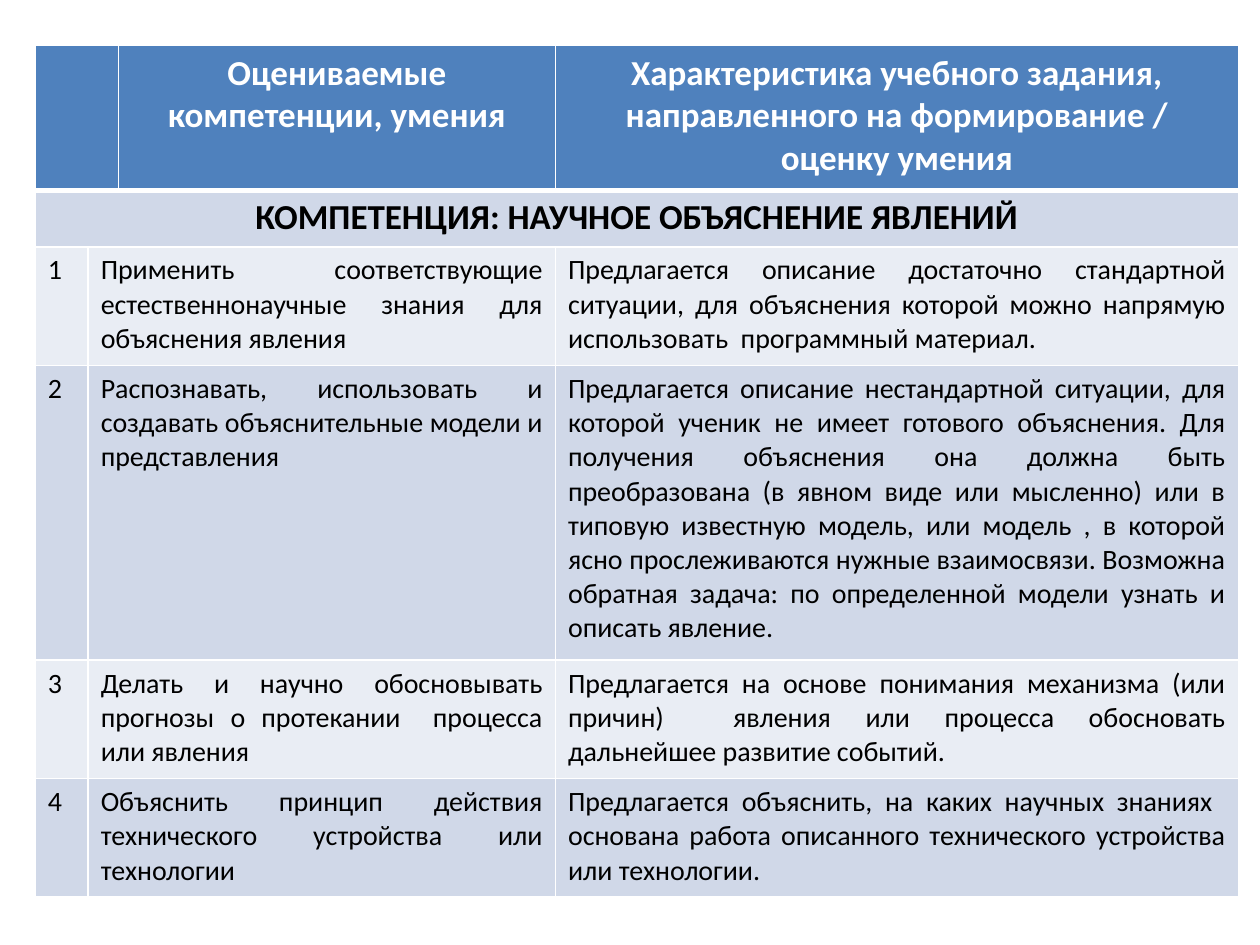
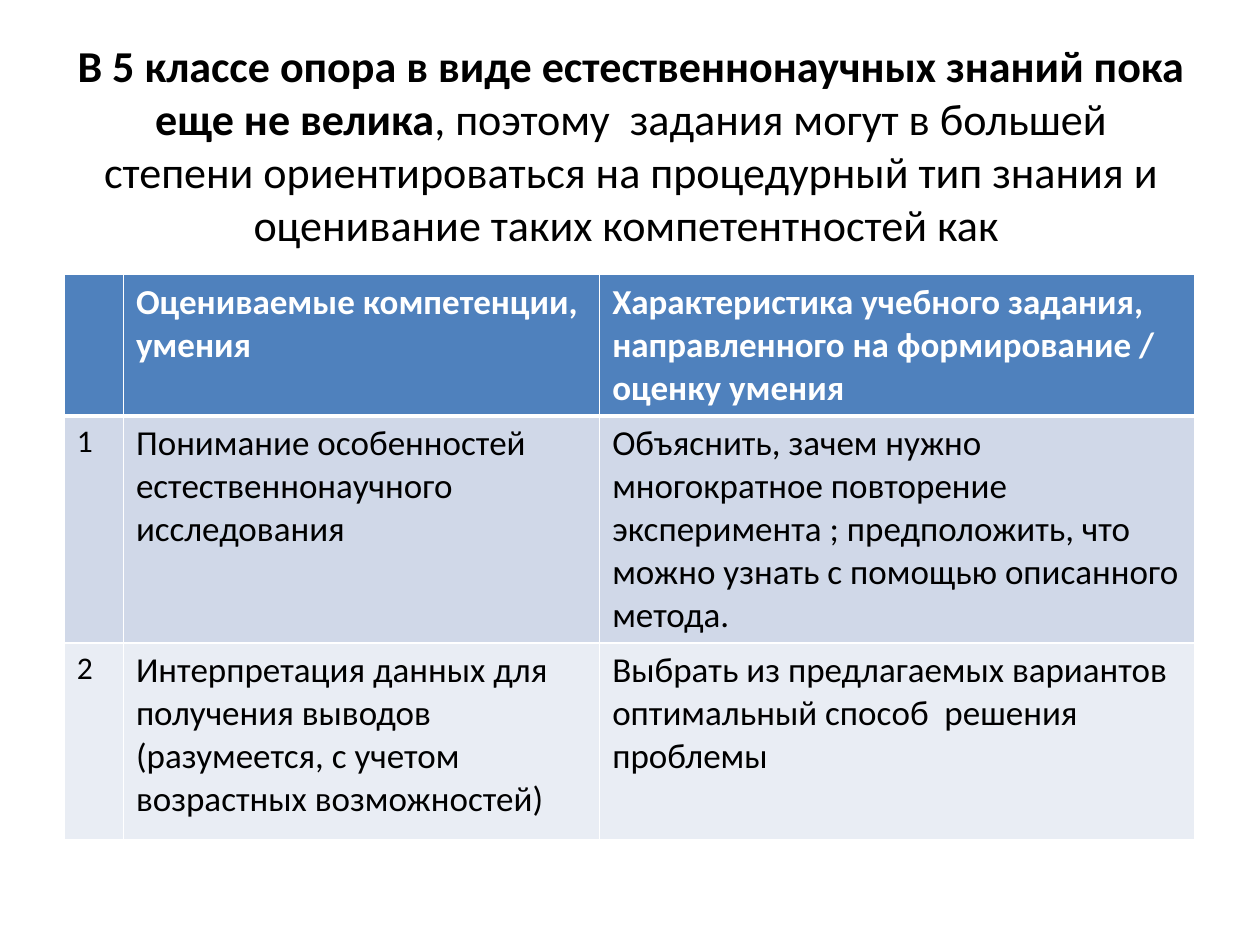
"""Build two slides with tables of science competences and learning tasks."""
from lxml import etree
from pptx import Presentation
from pptx.dml.color import RGBColor
from pptx.enum.text import MSO_ANCHOR, MSO_AUTO_SIZE, PP_ALIGN
from pptx.oxml.ns import qn
from pptx.util import Inches, Pt

LEFT, CENTER, JUSTIFY = PP_ALIGN.LEFT, PP_ALIGN.CENTER, PP_ALIGN.JUSTIFY
MIDDLE, NO_FIT = MSO_ANCHOR.MIDDLE, MSO_AUTO_SIZE.NONE
TITLE_ONLY, BLANK = 5, 6
FONT = "Calibri"
WHITE, BLACK, BLUE = "FFFFFF", "000000", "4F81BD"
BANDS = ("D0D8E8", "E9EDF4")

SKILLS = "Оцениваемые компетенции, умения"
TASKS = "Характеристика учебного задания, направленного на формирование / оценку умения"

TITLE = [
    ("В 5 классе опора в виде естественнонаучных знаний пока еще не велика", True),
    (", поэтому  задания могут в большей степени ориентироваться на процедурный "
     "тип знания и оценивание таких компетентностей как ", False),
]
TITLE_BOX = dict(left=0.51, top=0.52, width=9, height=1.25)

EXPLAINING = dict(
    at=(0.28, 0.36), columns=(0.42, 0.14, 3.47, 5.42),
    heights=(1.15, 0.45, 0.94, 2.34, 0.94, 0.94),
    merges=[(0, 0, 1), (1, 0, 3)] + [(row, 1, 2) for row in range(2, 6)],
    header_align=CENTER, body_align=JUSTIFY, number_size=16, body_size=16,
    rows=[
        ("", None, SKILLS, TASKS),
        ("КОМПЕТЕНЦИЯ: НАУЧНОЕ ОБЪЯСНЕНИЕ ЯВЛЕНИЙ", None, None, None),
        ("1", "Применить соответствующие естественнонаучные знания для объяснения явления",
         None,
         "Предлагается описание достаточно стандартной ситуации, для объяснения которой "
         "можно напрямую использовать  программный материал."),
        ("2", "Распознавать, использовать и создавать объяснительные модели и представления ",
         None,
         "Предлагается описание нестандартной ситуации, для которой ученик не имеет "
         "готового объяснения. Для получения объяснения она должна быть преобразована "
         "(в явном виде или мысленно) или в типовую известную модель, или модель , "
         "в которой ясно прослеживаются нужные взаимосвязи. Возможна обратная задача: "
         "по определенной модели узнать и описать явление."),
        ("3", "Делать и научно обосновывать прогнозы о протекании  процесса или явления",
         None,
         "Предлагается на основе понимания механизма (или причин)  явления или процесса "
         "обосновать дальнейшее развитие событий."),
        ("4", "Объяснить принцип действия технического устройства или технологии",
         None,
         "Предлагается объяснить, на каких научных знаниях  основана работа описанного "
         "технического устройства или технологии. "),
    ],
)

FIFTH_GRADE = dict(
    at=(0.51, 2.18), columns=(0.47, 3.78, 4.72), heights=(1.03, 1.66, 1.56),
    merges=[], header_align=LEFT, body_align=LEFT, number_size=18, body_size=20,
    rows=[
        ("", SKILLS, TASKS),
        ("1", "Понимание особенностей естественнонаучного исследования",
         "Объяснить, зачем нужно многократное повторение эксперимента ; предположить, "
         "что можно узнать с помощью описанного метода."),
        ("2", "Интерпретация данных для получения выводов (разумеется, с учетом "
         "возрастных возможностей)",
         "Выбрать из предлагаемых вариантов оптимальный способ  решения проблемы"),
    ],
)


def rgb(value):
    """Turn a hex string into a colour."""
    return RGBColor.from_string(value)


def add_span(para, text, size, color, bold):
    """Add formatted text to a paragraph."""
    span = para.add_run()
    span.text = text
    for name, value in dict(name=FONT, size=Pt(size), bold=bold).items():
        setattr(span.font, name, value)
    span.font.color.rgb = rgb(color)


def set_borders(cell, bottom):
    """Draw white cell borders with the given bottom width, in points."""
    properties = cell._tc.get_or_add_tcPr()
    for index, (side, width) in enumerate(dict(L=1, R=1, T=1, B=bottom).items()):
        line = etree.Element(qn(f"a:ln{side}"), w=str(Pt(width)))
        fill = etree.SubElement(line, qn("a:solidFill"))
        etree.SubElement(fill, qn("a:srgbClr"), val=WHITE)
        properties.insert(index, line)


def cell_style(data, row, column):
    """Return alignment, size, colour and weight for a table position."""
    if row == 0:
        return data["header_align"], 20, WHITE, True
    if data["rows"][row][1] is None:
        return CENTER, 20, BLACK, True
    if column == 0:
        return LEFT, data["number_size"], BLACK, False
    return data["body_align"], data["body_size"], BLACK, False


def add_grid(slide, data):
    """Add a banded table described by its data."""
    columns, heights = data["columns"], data["heights"]
    box = [Inches(n) for n in (*data["at"], sum(columns), sum(heights))]
    table = slide.shapes.add_table(len(heights), len(columns), *box).table
    for column, width in zip(table.columns, columns):
        column.width = Inches(width)
    for row, height in zip(table.rows, heights):
        row.height = Inches(height)
    for row, first, last in data["merges"]:
        table.cell(row, first).merge(table.cell(row, last))
    for row, texts in enumerate(data["rows"]):
        for column, text in enumerate(texts):
            cell = table.cell(row, column)
            cell.fill.solid()
            cell.fill.fore_color.rgb = rgb(BANDS[(row - 1) % 2] if row else BLUE)
            top_edge = 3 if row == 1 else 1
            set_borders(cell, 1 if row else 3)
            cell._tc.tcPr.find(qn("a:lnT")).set("w", str(Pt(top_edge)))
            if text:
                align, *style = cell_style(data, row, column)
                para = cell.text_frame.paragraphs[0]
                para.alignment = align
                add_span(para, text, *style)


def add_title(slide):
    """Place and fill the slide title."""
    title = slide.shapes.title
    for name, value in TITLE_BOX.items():
        setattr(title, name, Inches(value))
    frame = title.text_frame
    for name, value in dict(word_wrap=True, auto_size=NO_FIT, vertical_anchor=MIDDLE).items():
        setattr(frame, name, value)
    para = frame.paragraphs[0]
    para.alignment = CENTER
    for text, bold in TITLE:
        add_span(para, text, 25.2, BLACK, bold)


def main():
    """Build and save the deck."""
    deck = Presentation()
    deck.slide_width, deck.slide_height = Inches(10), Inches(7.5)
    add_grid(deck.slides.add_slide(deck.slide_layouts[BLANK]), EXPLAINING)
    page = deck.slides.add_slide(deck.slide_layouts[TITLE_ONLY])
    add_title(page)
    add_grid(page, FIFTH_GRADE)
    deck.save("out.pptx")


if __name__ == "__main__":
    main()
